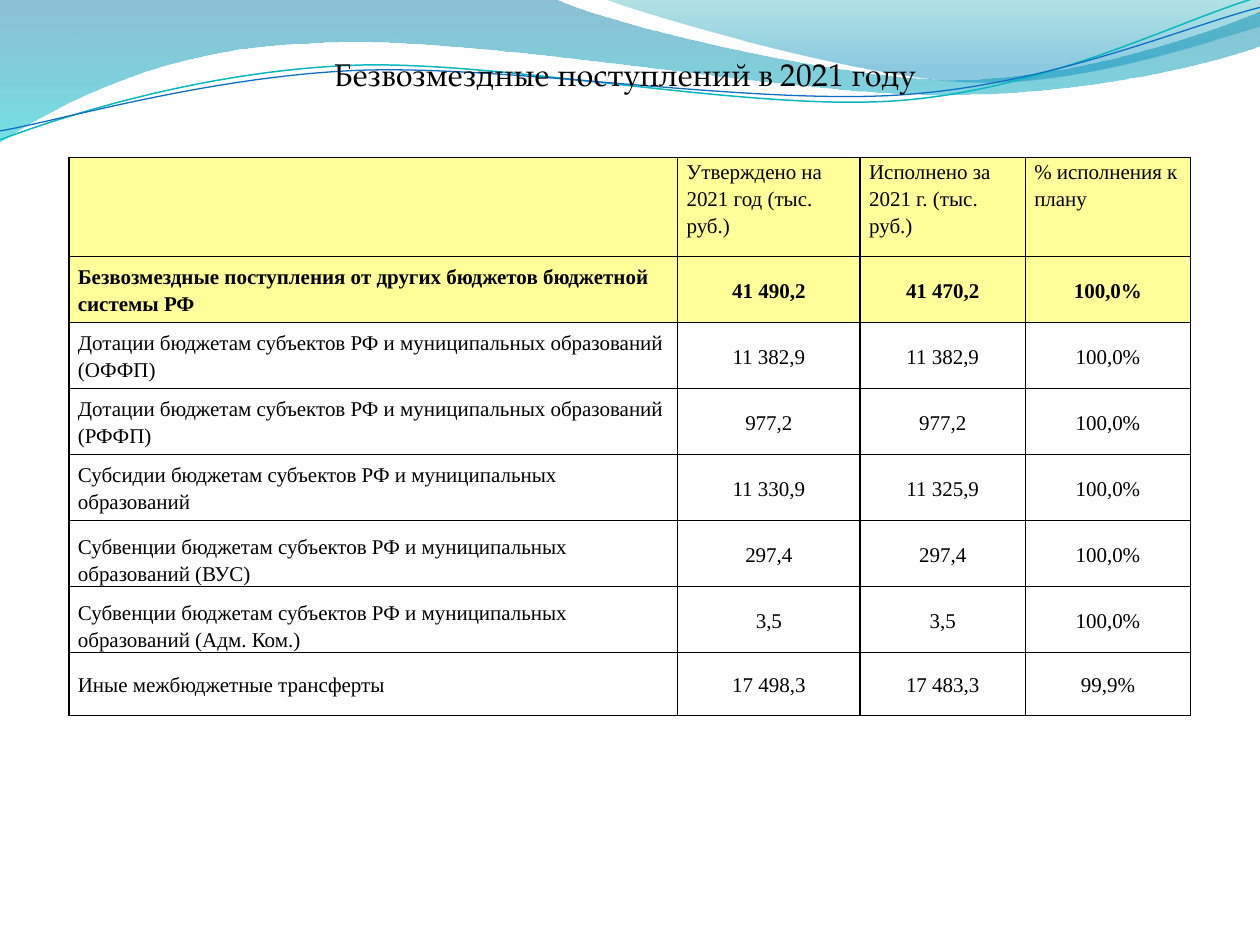
from lxml import etree
from pptx import Presentation
from pptx.dml.color import RGBColor
from pptx.enum import text
from pptx.oxml import ns
from pptx.util import Cm, Pt

BLACK = RGBColor(0x00, 0x00, 0x00)
YELLOW = RGBColor(0xFF, 0xFF, 0x99)
DEEP_BLUE = RGBColor(0x00, 0x74, 0xA1)
AQUA = RGBColor(0x00, 0xC6, 0xCF)
TEAL = RGBColor(0x00, 0xA1, 0xA9)
SKY = RGBColor(0x00, 0x8B, 0xBF)
LINE_TEAL = RGBColor(0x0A, 0xB8, 0xBF)
LINE_BLUE = RGBColor(0x0F, 0x6F, 0xC6)

# Outlines in cm: a pair is a corner, six numbers are a Bezier segment
BANDS = [
    ([(0, 0), (11.18, -0.03),
      (12.09, 0.43, 16.87, 1.6, 19.25, 1.6),
      (21.67, 1.6, 24.33, 0.66, 25.4, 0.23), (25.43, 0.91),
      (24.97, 1.12, 22.1, 1.93, 18.95, 1.91),
      (15.8, 1.91, 9.7, 0.71, 6.53, 0.86),
      (3.28, 0.91, 1.17, 2.11, -0.03, 2.87), (0, 0)],
     [(0, DEEP_BLUE, 45), (1, AQUA, 55)]),
    ([(12.17, -0.03),
      (12.93, 0.28, 17.32, 1.57, 19.53, 1.65),
      (21.74, 1.75, 24.41, 0.81, 25.4, 0.53), (25.4, 0), (12.17, -0.03)],
     [(0, TEAL, 30), (0.8, SKY, 45)]),
]
CURVES = [
    ([(0, 2.82),
      (1.22, 2.36, 4.01, 1.45, 7.04, 1.32),
      (10.03, 1.19, 15.06, 2.26, 18.11, 2.03),
      (21.16, 1.8, 23.83, 0.38, 25.35, -0.05)], LINE_TEAL, 0.85),
    ([(0, 2.64),
      (1.19, 2.44, 4.17, 1.55, 7.19, 1.42),
      (10.24, 1.3, 15.16, 2.13, 18.21, 1.91),
      (21.23, 1.7, 23.9, 0.53, 25.4, 0.15)], LINE_BLUE, 0.75),
]

COLUMN_WIDTHS = [12.27, 3.68, 3.33, 3.33]
ROW_HEIGHTS = [2.0] + [1.33] * 6 + [1.27]
ROWS = [
    ("", "Утверждено на 2021 год (тыс. руб.)", "Исполнено за 2021 г. (тыс. руб.)",
     "% исполнения к плану"),
    ("Безвозмездные поступления от других бюджетов бюджетной системы РФ",
     "41 490,2", "41 470,2", "100,0%"),
    ("Дотации бюджетам субъектов РФ и муниципальных образований (ОФФП)",
     "11 382,9", "11 382,9", "100,0%"),
    ("Дотации бюджетам субъектов РФ и муниципальных образований (РФФП)",
     "977,2", "977,2", "100,0%"),
    ("Субсидии бюджетам субъектов РФ и муниципальных образований",
     "11 330,9", "11 325,9", "100,0%"),
    ("Субвенции бюджетам субъектов РФ и муниципальных образований (ВУС)",
     "297,4", "297,4", "100,0%"),
    ("Субвенции бюджетам субъектов РФ и муниципальных образований (Адм. Ком.)",
     "3,5", "3,5", "100,0%"),
    ("Иные межбюджетные трансферты", "17 498,3", "17 483,3", "99,9%"),
]
HEADER_ROW, TOTAL_ROW = 0, 1
BOTTOM_ROWS = (5, 6)


def add_outline(page, box, segments, close):
    corners = [(Cm(segment[-2]), Cm(segment[-1])) for segment in segments]
    builder = page.shapes.build_freeform(*corners[0])
    builder.add_line_segments(corners[1:], close=close)
    shape = builder.convert_to_shape(Cm(box[0]), Cm(box[1]))
    shape.shadow.inherit = False
    # Turn the straight steps into Bezier segments where control points are given
    left, top = (min(values) for values in zip(*corners))
    steps = list(shape.element.iter(ns.qn("a:lnTo")))
    for step, segment in zip(steps, segments[1:]):
        if len(segment) == 6:
            curve = etree.Element(ns.qn("a:cubicBezTo"))
            for x, y in zip(segment[::2], segment[1::2]):
                etree.SubElement(curve, ns.qn("a:pt"), x=str(Cm(x) - left), y=str(Cm(y) - top))
            step.getparent().replace(step, curve)
    return shape


def add_waves(page, box):
    # Translucent bands
    for segments, stops in BANDS:
        band = add_outline(page, box, segments, True)
        band.line.fill.background()
        band.fill.gradient()
        band.fill.gradient_angle = 270
        for stop, (position, color, _) in zip(band.fill.gradient_stops, stops):
            stop.position = position
            stop.color.rgb = color
        for node, (_, _, opacity) in zip(band.element.iter(ns.qn("a:srgbClr")), stops):
            etree.SubElement(node, ns.qn("a:alpha"), val=str(opacity * 1000))
    # Thin curves
    for segments, color, width in CURVES:
        curve = add_outline(page, box, segments, False)
        curve.fill.background()
        curve.line.color.rgb = color
        curve.line.width = Pt(width)


def place_title(page, box):
    title = page.shapes.title
    title.left, title.top, title.width, title.height = map(Cm, box)
    frame = title.text_frame
    frame.text = "Безвозмездные поступлений в 2021 году"
    frame.word_wrap = True
    frame.auto_size = text.MSO_AUTO_SIZE.SHAPE_TO_FIT_TEXT
    frame.vertical_anchor = text.MSO_ANCHOR.TOP
    para = frame.paragraphs[0]
    para.alignment = text.PP_ALIGN.CENTER
    para.font.name = "TeX Gyre Pagella"
    para.font.size = Pt(18)
    para.font.color.rgb = BLACK
    # Bring the title in front of the waves
    title.element.getparent().append(title.element)


def add_borders(cell):
    properties = cell._tc.get_or_add_tcPr()
    for index, side in enumerate(("lnL", "lnR", "lnT", "lnB")):
        line = etree.Element(ns.qn("a:" + side), w=str(Pt(1)))
        fill = etree.SubElement(line, ns.qn("a:solidFill"))
        etree.SubElement(fill, ns.qn("a:srgbClr"), val=str(BLACK))
        properties.insert(index, line)


def format_cell(cell, row, column):
    cell.margin_left = cell.margin_right = Cm(0.18)
    cell.margin_top = cell.margin_bottom = 0
    if row == HEADER_ROW:
        cell.vertical_anchor = text.MSO_ANCHOR.TOP
    elif row in BOTTOM_ROWS and column == 0:
        cell.vertical_anchor = text.MSO_ANCHOR.BOTTOM
    else:
        cell.vertical_anchor = text.MSO_ANCHOR.MIDDLE
    if row <= TOTAL_ROW:
        cell.fill.solid()
        cell.fill.fore_color.rgb = YELLOW
    else:
        cell.fill.background()
    para = cell.text_frame.paragraphs[0]
    is_number = row != HEADER_ROW and column > 0
    para.alignment = text.PP_ALIGN.CENTER if is_number else text.PP_ALIGN.LEFT
    para.line_spacing = 1.15
    para.space_after = Pt(10)
    para.font.name = "Times New Roman"
    para.font.size = Pt(12)
    para.font.bold = row == TOTAL_ROW
    para.font.color.rgb = BLACK
    add_borders(cell)


def add_receipts_table(page, box):
    frame = page.shapes.add_table(len(ROWS), len(COLUMN_WIDTHS), *map(Cm, box))
    table = frame.table
    table.first_row = table.horz_banding = False
    for column, width in zip(table.columns, COLUMN_WIDTHS):
        column.width = Cm(width)
    for row, height in zip(table.rows, ROW_HEIGHTS):
        row.height = Cm(height)
    for row, values in enumerate(ROWS):
        for column, value in enumerate(values):
            cell = table.cell(row, column)
            if value:
                cell.text = value
            format_cell(cell, row, column)


def main():
    deck = Presentation()
    deck.slide_width, deck.slide_height = Cm(25.4), Cm(19.05)
    page = deck.slides.add_slide(deck.slide_layouts[5])
    add_waves(page, (0, 0))
    place_title(page, (1.98, 0.98, 21.23, 1.02))
    add_receipts_table(page, (1.39, 3.17, sum(COLUMN_WIDTHS), sum(ROW_HEIGHTS)))
    deck.save("out.pptx")


if __name__ == "__main__":
    main()
